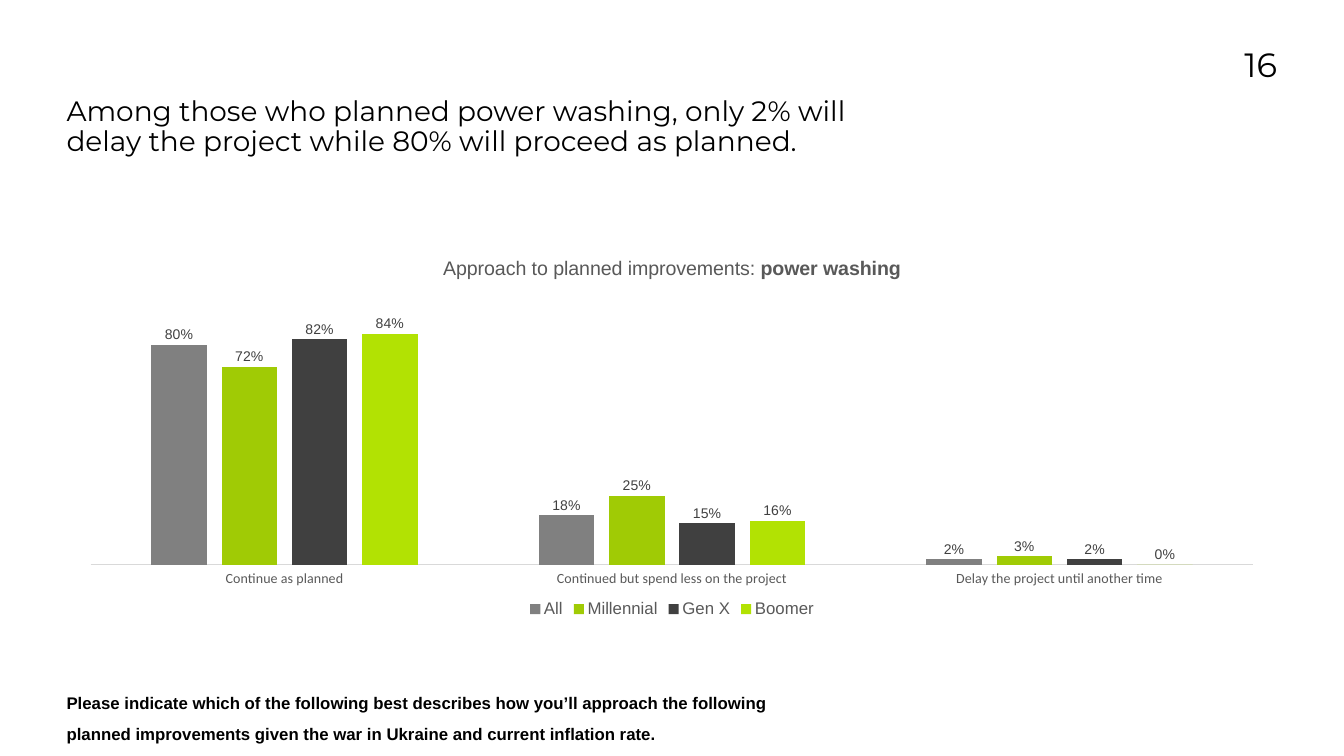
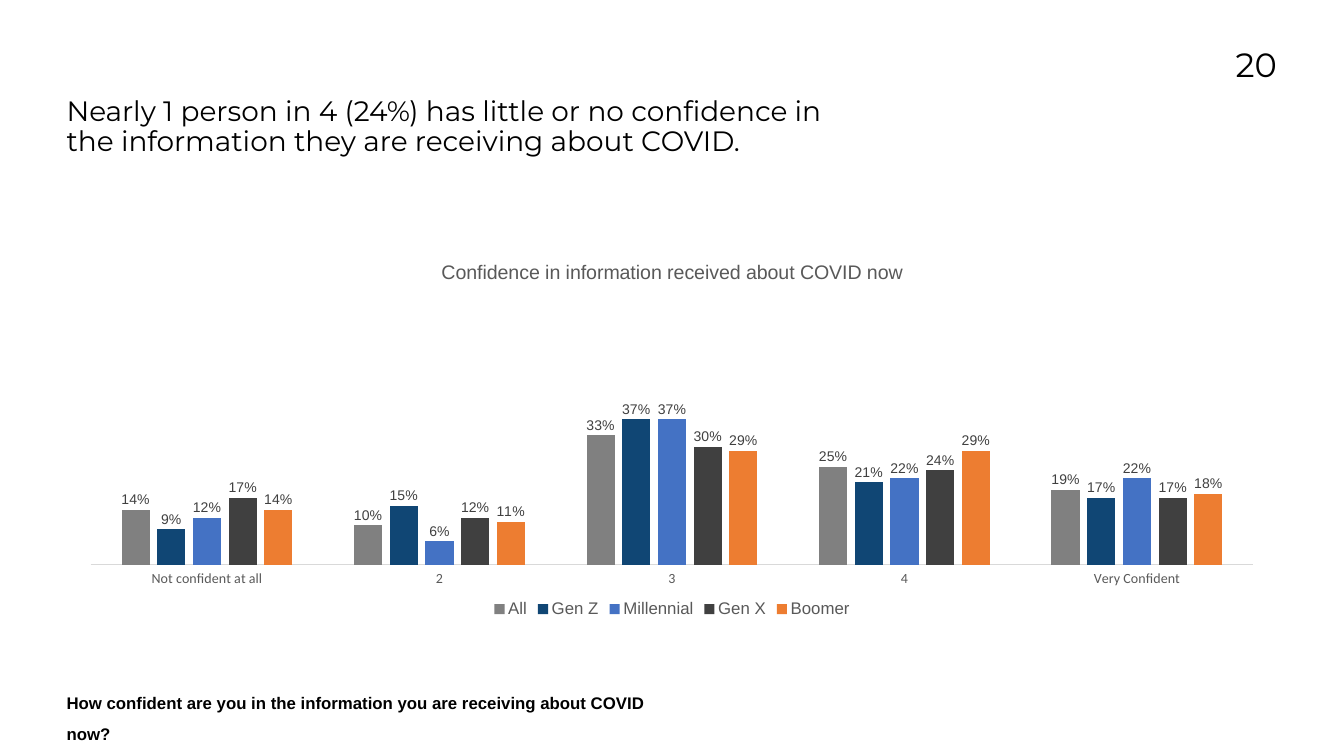
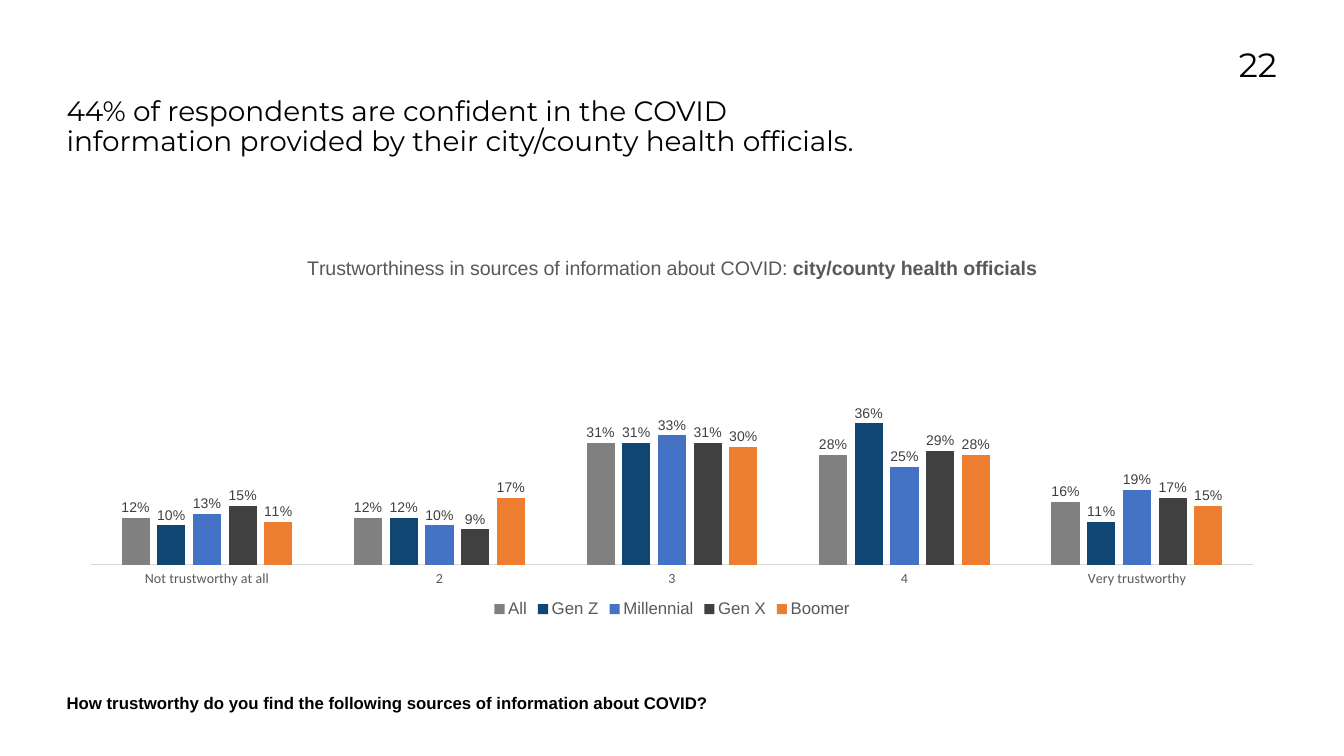
from lxml.etree import SubElement
from pptx import Presentation
from pptx.chart.data import CategoryChartData
from pptx.dml.color import RGBColor
from pptx.enum.chart import XL_CHART_TYPE as ChartType
from pptx.enum.chart import XL_LABEL_POSITION as LabelPosition
from pptx.enum.chart import XL_LEGEND_POSITION as LegendPosition
from pptx.enum.chart import XL_TICK_LABEL_POSITION as TickLabelPosition
from pptx.enum.chart import XL_TICK_MARK as TickMark
from pptx.enum.text import MSO_ANCHOR as Anchor
from pptx.enum.text import MSO_AUTO_SIZE as AutoSize
from pptx.enum.text import PP_ALIGN as Align
from pptx.oxml.ns import qn
from pptx.util import Inches, Pt

COLORS = {
    "background": "FFFFFF", "text": "000000", "muted": "595959",
    "label": "404040", "axis": "D9D9D9", "gray": "808080",
    "charcoal": "404040", "green": "A0CB05", "lime": "B2E203",
    "navy": "104674", "blue": "4472C4", "orange": "ED7D31",
}

FONTS = {
    "page": {"name": "Montserrat", "size": 48, "color": "text"},
    "title": {"name": "Montserrat", "size": 40, "color": "text"},
    "question": {"name": "Arial", "size": 24, "color": "text", "bold": True},
    "chart": {"name": "Calibri", "size": 10, "color": "text"},
    "chart title": {"name": "Arial", "size": 28, "color": "muted", "bold": False},
    "category": {"name": "Calibri", "size": 20, "color": "muted"},
    "legend": {"name": "Arial", "size": 24, "color": "muted"},
    "value": {"name": "Arial", "size": 20, "color": "label"},
}

LEFT = 1.32
PAGE_BOX = (23.09, 0.88, 2.25, 1.64)
TITLE_BOX = (LEFT, 1.93, 16.01, 2.08)
CHART_BOX = (LEFT, 4.88, 24.03, 7.46)
QUESTION_TOP, QUESTION_HEIGHT = 13.55, 0.65
PLOT_LAYOUT = {"x": 0.02, "y": 0.117, "w": 0.96, "h": 0.731}

PROJECT_SERIES = {"All": "gray", "Millennial": "green", "Gen X": "charcoal", "Boomer": "lime"}
COVID_SERIES = {"All": "gray", "Gen Z": "navy", "Millennial": "blue",
                "Gen X": "charcoal", "Boomer": "orange"}

SLIDES = [
    {
        "page": "16",
        "title": "Among those who planned power washing, only 2% will delay the project "
                 "while 80% will proceed as planned.",
        "chart title": ("Approach to planned improvements: ", "power washing"),
        "question": "Please indicate which of the following best describes how you’ll approach "
                    "the following planned improvements given the war in Ukraine and current "
                    "inflation rate.",
        "question width": 14.52,
        "maximum": 1,
        "categories": ["Continue as planned", "Continued but spend less on the project",
                       "Delay the project until another time"],
        "series": PROJECT_SERIES,
        "percents": [(80, 18, 2), (72, 25, 3), (82, 15, 2), (84, 16, 0)],
    },
    {
        "page": "20",
        "title": "Nearly 1 person in 4 (24%) has little or no confidence in the information "
                 "they are receiving about COVID.",
        "chart title": ("Confidence in information received about COVID now",),
        "question": "How confident are you in the information you are receiving about COVID now?",
        "question width": 12.01,
        "maximum": 0.7,
        "categories": ["Not confident at all", "2", "3", "4", "Very Confident"],
        "series": COVID_SERIES,
        "percents": [(14, 10, 33, 25, 19), (9, 15, 37, 21, 17), (12, 6, 37, 22, 22),
                     (17, 12, 30, 24, 17), (14, 11, 29, 29, 18)],
    },
    {
        "page": "22",
        "title": "44% of respondents are confident in the COVID information provided by their "
                 "city/county health officials.",
        "chart title": ("Trustworthiness in sources of information about COVID: ",
                        "city/county health officials"),
        "question": "How trustworthy do you find the following sources of information about COVID?",
        "question width": 14.52,
        "maximum": 0.7,
        "categories": ["Not trustworthy at all", "2", "3", "4", "Very trustworthy"],
        "series": COVID_SERIES,
        "percents": [(12, 12, 31, 28, 16), (10, 12, 31, 36, 11), (13, 10, 33, 25, 19),
                     (15, 9, 31, 29, 17), (11, 17, 30, 28, 15)],
    },
]


def color(name):
    return RGBColor.from_string(COLORS[name])


def set_attributes(target, values):
    for name, value in values.items():
        setattr(target, name, value)


def format_font(font, style):
    values = dict(FONTS[style])
    font.color.rgb = color(values.pop("color"))
    values["size"] = Pt(values["size"])
    set_attributes(font, values)


def inches(box):
    return [Inches(length) for length in box]


def write_text(shape, text, style, **paragraph_format):
    frame = shape.text_frame
    set_attributes(frame, {
        "margin_left": 0, "margin_top": 0, "margin_right": 0, "margin_bottom": 0,
        "word_wrap": True, "auto_size": AutoSize.NONE, "vertical_anchor": Anchor.TOP,
    })
    paragraph = frame.paragraphs[0]
    set_attributes(paragraph, {"alignment": Align.LEFT, **paragraph_format})
    run = paragraph.add_run()
    run.text = text
    format_font(run.font, style)


def add_text(slide, box, text, style, **paragraph_format):
    write_text(slide.shapes.add_textbox(*inches(box)), text, style, **paragraph_format)


def place_title(slide, text):
    title = slide.shapes.title
    set_attributes(title, dict(zip(("left", "top", "width", "height"), inches(TITLE_BOX))))
    write_text(title, text, "title", line_spacing=0.9)


def fix_plot_area(chart):
    plot_area = chart.plots[0]._element.getparent()
    for layout in plot_area.findall(qn("c:layout")):
        plot_area.remove(layout)
    layout = SubElement(plot_area, qn("c:layout"))
    plot_area.insert(0, layout)
    manual = SubElement(layout, qn("c:manualLayout"))
    settings = {"layoutTarget": "inner", "xMode": "edge", "yMode": "edge", **PLOT_LAYOUT}
    for name, value in settings.items():
        SubElement(manual, qn(f"c:{name}")).set("val", str(value))


def write_chart_title(chart, parts):
    chart.has_title = True
    chart.chart_title.include_in_layout = False
    paragraph = chart.chart_title.text_frame.paragraphs[0]
    for index, part in enumerate(parts):
        run = paragraph.add_run()
        run.text = part
        format_font(run.font, "chart title")
        run.font.bold = index > 0


def format_axes(chart, maximum):
    set_attributes(chart.value_axis, {
        "minimum_scale": 0, "maximum_scale": maximum,
        "has_major_gridlines": False, "visible": False,
    })
    axis = chart.category_axis
    set_attributes(axis, {
        "major_tick_mark": TickMark.NONE, "minor_tick_mark": TickMark.NONE,
        "tick_label_position": TickLabelPosition.LOW, "has_major_gridlines": False,
    })
    format_font(axis.tick_labels.font, "category")
    axis.format.line.color.rgb = color("axis")
    axis.format.line.width = Pt(0.75)


def add_column_chart(slide, content):
    data = CategoryChartData(number_format="0%")
    data.categories = content["categories"]
    for name, percents in zip(content["series"], content["percents"]):
        data.add_series(name, [percent / 100 for percent in percents])
    chart = slide.shapes.add_chart(ChartType.COLUMN_CLUSTERED, *inches(CHART_BOX), data).chart
    format_font(chart.font, "chart")
    write_chart_title(chart, content["chart title"])
    format_axes(chart, content["maximum"])
    chart.has_legend = True
    set_attributes(chart.legend, {"position": LegendPosition.BOTTOM, "include_in_layout": False})
    format_font(chart.legend.font, "legend")
    plot = chart.plots[0]
    set_attributes(plot, {"gap_width": 219, "overlap": -27, "vary_by_categories": False})
    for series, fill in zip(plot.series, content["series"].values()):
        series.format.fill.solid()
        series.format.fill.fore_color.rgb = color(fill)
        series.invert_if_negative = False
        labels = series.data_labels
        set_attributes(labels, {
            "show_value": True, "position": LabelPosition.OUTSIDE_END,
            "number_format": "0%", "number_format_is_linked": False,
        })
        format_font(labels.font, "value")
    fix_plot_area(chart)


def build_slide(presentation, content):
    slide = presentation.slides.add_slide(presentation.slide_layouts[5])
    slide.background.fill.solid()
    slide.background.fill.fore_color.rgb = color("background")
    place_title(slide, content["title"])
    add_text(slide, PAGE_BOX, content["page"], "page", alignment=Align.RIGHT)
    add_column_chart(slide, content)
    question_box = (LEFT, QUESTION_TOP, content["question width"], QUESTION_HEIGHT)
    add_text(slide, question_box, content["question"], "question", line_spacing=1.5)


def main():
    presentation = Presentation()
    presentation.slide_width = Inches(26.67)
    presentation.slide_height = Inches(15)
    for content in SLIDES:
        build_slide(presentation, content)
    presentation.save("out.pptx")


if __name__ == "__main__":
    main()
